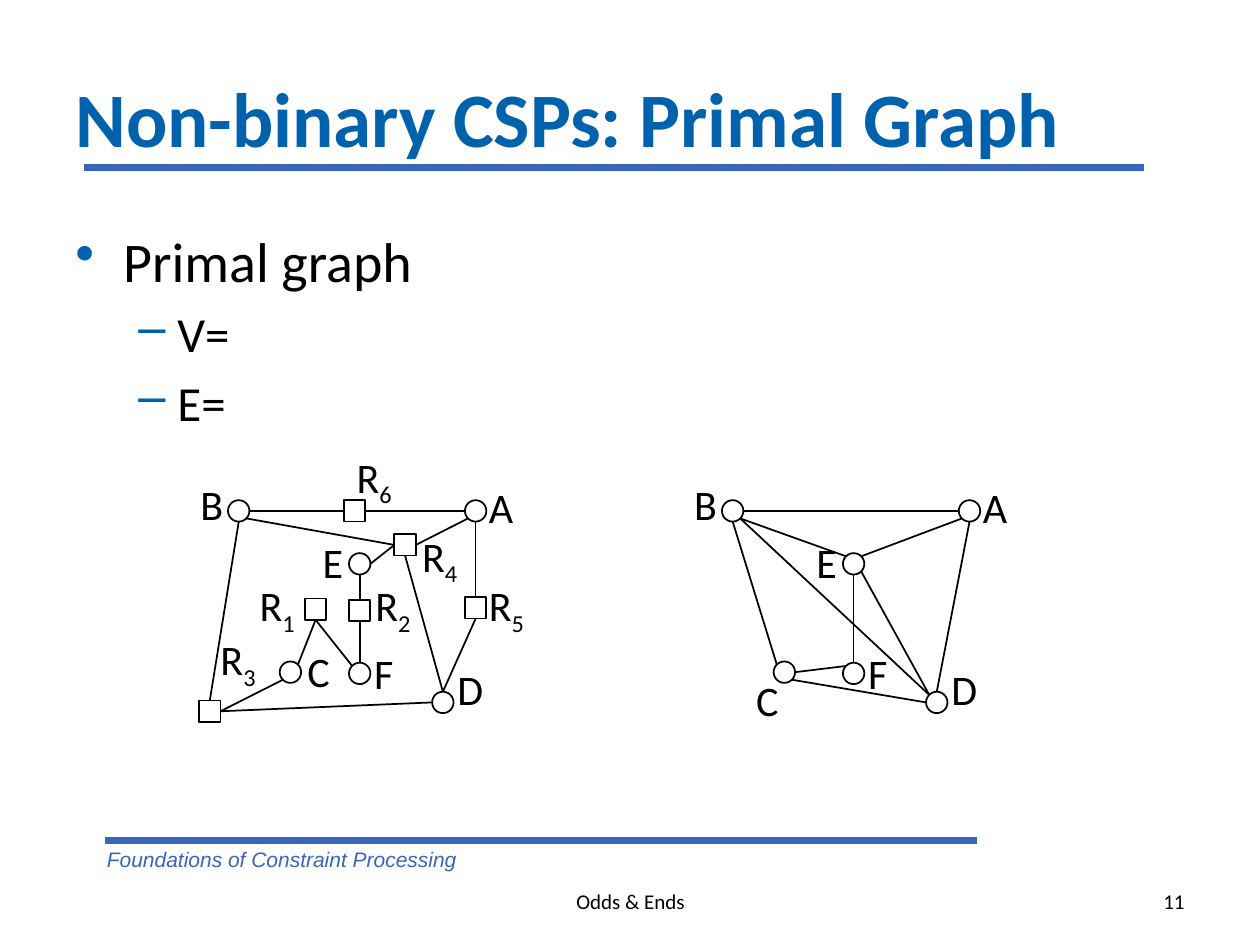
from dataclasses import dataclass
from typing import NamedTuple

from lxml import etree
from pptx import Presentation
from pptx import util as u
from pptx.dml.color import RGBColor
from pptx.enum import shapes, text
from pptx.oxml.ns import qn


@dataclass(frozen=True)
class Theme:
    blue: str = "0062AC"
    rule: str = "3A65BC"
    ink: str = "000000"
    paper: str = "FFFFFF"
    font: str = "Calibri"
    note: str = "Arial"
    head: int = 44
    main: int = 32
    sub: int = 28
    mark: int = 24
    foot: int = 12
    thin: int = 1
    thick: int = 4


class Node(NamedTuple):
    x: float
    y: float
    label: str
    left: float
    top: float
    wide: float


class Edge(NamedTuple):
    start: str
    port: str
    end: str
    goal: str


class Point(NamedTuple):
    sign: str
    words: str
    size: int
    level: int
    margin: float
    indent: float


T = Theme()
SIDE = 0.17
SHIFT = 3.92  # from the left graph to the right one
PORTS = {"N": (0, -1), "S": (0, 1), "W": (-1, 0), "E": (1, 0),
         "NW": (-0.7, -0.7), "NE": (0.7, -0.7),
         "SW": (-0.7, 0.7), "SE": (0.7, 0.7)}

# Variables are circles, relations are squares
VARS = {
    "A": Node(3.69, 3.97, "A", 3.88, 3.82, 0.29),
    "B": Node(1.81, 3.97, "B", 1.59, 3.8, 0.24),
    "C": Node(2.22, 5.25, "C", 2.44, 5.12, 0.21),
    "D": Node(3.43, 5.49, "D", 3.63, 5.27, 0.25),
    "E": Node(2.77, 4.39, "E", 2.56, 4.26, 0.25),
    "F": Node(2.77, 5.26, "F", 2.97, 5.14, 0.19),
}
RELS = {
    "R1": Node(2.42, 4.75, "R1", 2.06, 4.6, 0.41),
    "R2": Node(2.77, 4.76, "R2", 2.98, 4.6, 0.53),
    "R3": Node(1.58, 5.56, "R3", 1.75, 5.03, 0.44),
    "R4": Node(3.13, 4.24, "R4", 3.35, 4.21, 0.43),
    "R5": Node(3.69, 4.74, "R5", 3.88, 4.6, 0.39),
    "R6": Node(2.73, 3.97, "R6", 2.83, 3.58, 0.44),
}
DUAL = """C SW R3 E, B SE R4 W, D N R5 S, R4 E A SW, E E R4 W,
    R5 N A S, D N R4 S, R6 W B E, B S R3 N, C NE R1 S, R1 S F NW,
    R3 E D W, A W R6 E, R2 S F N, R2 N E S"""
PRIMAL = """B SE D NW, B SE E NW, D NW E SE, E NE A SW, D N A S,
    A W B E, B S C NW, C E F NW, C SE D W, F N E S"""
POINTS = [
    Point("•", "Primal graph", T.main, 0, 0.38, -0.38),
    Point("–", "V=", T.sub, 1, 0.81, -0.31),
    Point("–", "E=", T.sub, 1, 0.81, -0.31),
]


def style(font, size: int, color: str = T.ink, **more) -> None:
    form = {"name": T.font, "size": u.Pt(size), **more}
    for key, value in form.items():
        setattr(font, key, value)
    font.color.rgb = RGBColor.from_string(color)


def frame(host, x: float, y: float, w: float, h: float, **form):
    box = host.add_textbox(*map(u.Inches, (x, y, w, h))).text_frame
    for key, value in {"word_wrap": True, **form}.items():
        setattr(box, key, value)
    return box


def write(box, words: str, size: int, align=text.PP_ALIGN.LEFT, **more) -> None:
    para = box.paragraphs[0]
    para.alignment = align
    run = para.add_run()
    run.text = words
    style(run.font, size, **more)


def line(host, x1: float, y1: float, x2: float, y2: float,
         width: int = T.thin, color: str = T.ink) -> None:
    link = host.add_connector(shapes.MSO_CONNECTOR.STRAIGHT,
                              *map(u.Inches, (x1, y1, x2, y2)))
    link.line.width = u.Pt(width)
    link.line.color.rgb = RGBColor.from_string(color)
    etree.SubElement(link._element.spPr, qn("a:effectLst"))


def label(host, node: Node) -> None:
    box = frame(host, node.left, node.top, node.wide, 0.4,
                margin_left=0, margin_right=0, margin_top=0, margin_bottom=0,
                auto_size=text.MSO_AUTO_SIZE.SHAPE_TO_FIT_TEXT)
    write(box, node.label[0], T.mark)
    if node.label[1:]:
        write(box, node.label[1:], T.mark)
        run = box.paragraphs[0].runs[-1]
        run._r.get_or_add_rPr().set("baseline", "-25000")


def shape(host, node: Node, kind) -> None:
    item = host.add_shape(kind, *map(u.Inches, (node.x, node.y, SIDE, SIDE)))
    item.shadow.inherit = False
    item.fill.solid()
    item.fill.fore_color.rgb = RGBColor.from_string(T.paper)
    item.line.width = u.Pt(T.thin)
    item.line.color.rgb = RGBColor.from_string(T.ink)


def port(node: Node, side: str) -> tuple[float, float]:
    dx, dy = PORTS[side]
    half = SIDE / 2
    return node.x + half * (1 + dx), node.y + half * (1 + dy)


def graph(host, rounds: dict[str, Node], squares: dict[str, Node],
          links: str) -> None:
    nodes = {**rounds, **squares}
    for edge in (Edge(*part.split()) for part in links.split(",")):
        line(host, *port(nodes[edge.start], edge.port),
             *port(nodes[edge.end], edge.goal))
    kinds = shapes.MSO_SHAPE
    for group, kind in ((rounds, kinds.OVAL), (squares, kinds.RECTANGLE)):
        for node in group.values():
            shape(host, node, kind)
            label(host, node)


def bullet(para, point: Point) -> None:
    para.level = point.level
    props = para._p.get_or_add_pPr()
    props.set("marL", str(u.Inches(point.margin)))
    props.set("indent", str(u.Inches(point.indent)))
    tint = etree.SubElement(props, qn("a:buClr"))
    etree.SubElement(tint, qn("a:srgbClr"), val=T.blue)
    etree.SubElement(props, qn("a:buChar"), char=point.sign)
    para.text = point.words
    style(para.runs[0].font, point.size)


def main() -> None:
    deck = Presentation()
    deck.slide_width, deck.slide_height = u.Inches(10), u.Inches(7.5)
    host = deck.slides.add_slide(deck.slide_layouts[6]).shapes
    mid = text.MSO_ANCHOR.MIDDLE

    # Rules and course name
    line(host, 0.67, 1.33, 9.08, 1.33, T.thick, T.rule)
    line(host, 0.83, 6.67, 7.75, 6.67, T.thick, T.rule)
    write(frame(host, 0.75, 6.67, 5.25, 0.3), "Foundations of Constraint Processing",
          T.foot, color=T.rule, name=T.note, italic=True)

    # Title and bullets
    write(frame(host, 0.5, 0.3, 9, 1.25, vertical_anchor=mid),
          "Non-binary CSPs: Primal Graph", T.head, color=T.blue, bold=True)
    body = frame(host, 0.5, 1.75, 9, 4.95)
    for i, point in enumerate(POINTS):
        para = body.add_paragraph() if i else body.paragraphs[0]
        if i:
            para.space_before = u.Pt(0.2 * point.size)
        bullet(para, point)

    # Footer
    write(frame(host, 3.42, 6.95, 3.17, 0.4, vertical_anchor=mid),
          "Odds & Ends", T.foot, text.PP_ALIGN.CENTER)
    write(frame(host, 7.17, 6.95, 2.33, 0.4, vertical_anchor=mid),
          "11", T.foot, text.PP_ALIGN.RIGHT)

    # Constraint graph, then its primal graph with C's label moved below
    graph(host.add_group_shape().shapes, VARS, RELS, DUAL)
    moved = {key: node._replace(x=node.x + SHIFT, left=node.left + SHIFT)
             for key, node in VARS.items()}
    moved["C"] = moved["C"]._replace(left=6, top=5.35)
    graph(host, moved, {}, PRIMAL)

    deck.save("out.pptx")


if __name__ == "__main__":
    main()
